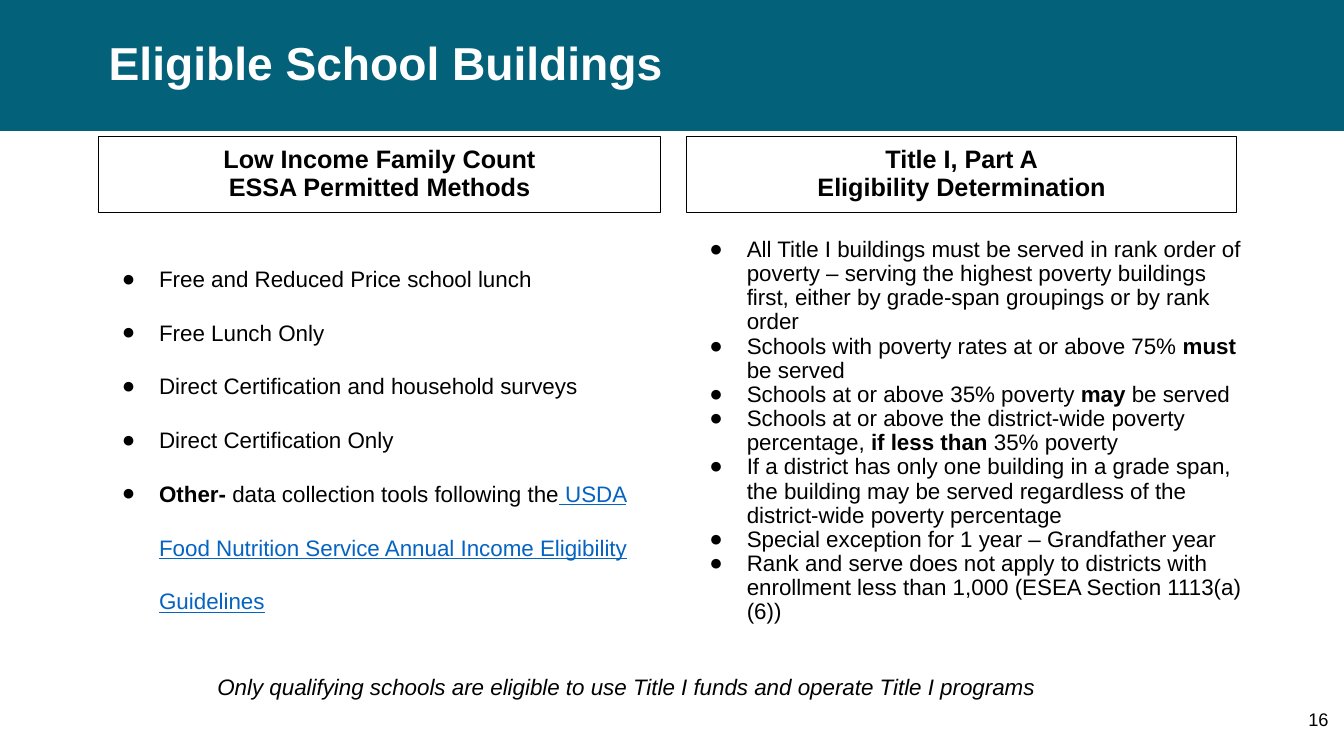
from lxml import etree
from pptx import Presentation
from pptx.dml.color import RGBColor
from pptx.enum.shapes import MSO_SHAPE
from pptx.enum.text import MSO_ANCHOR, MSO_AUTO_SIZE, PP_ALIGN
from pptx.oxml.ns import qn
from pptx.util import Cm, Pt

RECTANGLE = MSO_SHAPE.RECTANGLE
TOP, MIDDLE = MSO_ANCHOR.TOP, MSO_ANCHOR.MIDDLE
LEFT, CENTER, RIGHT = PP_ALIGN.LEFT, PP_ALIGN.CENTER, PP_ALIGN.RIGHT
NO_FIT = MSO_AUTO_SIZE.NONE

TEAL, WHITE, BLACK, LINK_BLUE = "03617A", "FFFFFF", "000000", "0563C1"

# Content: each bullet is a list of (text, style) spans
TITLE = "Eligible School Buildings"
METHODS = [
    [("Free and Reduced Price school lunch", "")],
    [("Free Lunch Only", "")],
    [("Direct Certification and household surveys", "")],
    [("Direct Certification Only", "")],
    [("Other-", "bold"), (" data collection tools following the", ""),
     (" USDA Food Nutrition Service Annual Income Eligibility Guidelines", "link")],
]
RULES = [
    [("All Title I buildings must be served in rank order of poverty – serving the "
      "highest poverty buildings first, either by grade-span groupings or by rank order", "")],
    [("Schools with poverty rates at or above 75% ", ""), ("must ", "bold"), ("be served", "")],
    [("Schools at or above 35% poverty ", ""), ("may ", "bold"), ("be served", "")],
    [("Schools at or above the district-wide poverty percentage, ", ""),
     ("if less than", "bold"), (" 35% poverty", "")],
    [("If a district has only one building in a grade span, the building may be served "
      "regardless of the district-wide poverty percentage", "")],
    [("Special exception for 1 year – Grandfather year", "")],
    [("Rank and serve does not apply to districts with enrollment less than 1,000 "
      "(ESEA Section 1113(a)(6))", "")],
]
NOTE = "Only qualifying schools are eligible to use Title I funds and operate Title I programs"
PAGE_NUMBER = "16"

# Geometry in centimetres
PAGE_WIDTH, PAGE_HEIGHT, BAND_HEIGHT = 33.87, 19.05, 3.3
MARGIN = 2.49
HEADING_TOP, HEADING_HEIGHT, LIST_TOP = 3.43, 1.93, 5.87

# Columns: heading, bullets, left, heading width, list width, list height, line spacing
COLUMNS = [
    ("Low Income Family Count\vESSA Permitted Methods", METHODS,
     MARGIN, 14.15, 14.33, 10.95, 2.0),
    ("Title I, Part A\vEligibility Determination", RULES,
     17.3, 13.87, 14.4, 12.45, 0.9),
]


def color(value):
    return RGBColor.from_string(value)


def place(shape, left, top, width, height):
    shape.left, shape.top = Cm(left), Cm(top)
    shape.width, shape.height = Cm(width), Cm(height)


def prepare_frame(shape, anchor, side=0.25, edge=0.13):
    frame = shape.text_frame
    frame.word_wrap = True
    frame.auto_size = NO_FIT
    frame.vertical_anchor = anchor
    frame.margin_left = frame.margin_right = Cm(side)
    frame.margin_top = frame.margin_bottom = Cm(edge)
    return frame


def style_span(span, size, ink=BLACK, bold=False, italic=False, underline=False):
    font = span.font
    font.name, font.size = "Arial", Pt(size)
    font.color.rgb = color(ink)
    font.bold, font.italic, font.underline = bold, italic, underline


def style_para(para, align, spacing):
    para.alignment = align
    para.line_spacing = spacing
    para.space_before = para.space_after = Pt(0)


def write(shape, text, size, align, anchor, spacing=0.9, edge=0.13, **style):
    frame = prepare_frame(shape, anchor, edge=edge)
    frame.text = text
    para = frame.paragraphs[0]
    style_para(para, align, spacing)
    for span in para.runs:
        style_span(span, size, **style)


def add_bullet(para):
    properties = para._p.get_or_add_pPr()
    properties.set("marL", str(Cm(1.27)))
    properties.set("indent", str(-Cm(0.94)))
    bullet_color = etree.SubElement(properties, qn("a:buClr"))
    etree.SubElement(bullet_color, qn("a:srgbClr"), val=BLACK)
    etree.SubElement(properties, qn("a:buFont"), typeface="Arial")
    etree.SubElement(properties, qn("a:buChar"), char="●")


def write_bullets(shape, bullets, spacing):
    frame = prepare_frame(shape, TOP)
    for index, spans in enumerate(bullets):
        para = frame.paragraphs[0] if index == 0 else frame.add_paragraph()
        add_bullet(para)
        style_para(para, LEFT, spacing)
        for text, style in spans:
            span = para.add_run()
            span.text = text
            is_link = style == "link"
            style_span(span, 16, LINK_BLUE if is_link else BLACK,
                       bold=style == "bold", underline=is_link)


def add_label(page, area, text, size, align, spacing, italic=False):
    box = page.shapes.add_textbox(*(Cm(length) for length in area))
    write(box, text, size, align, TOP, spacing, edge=0.25, italic=italic)
    return box


def main():
    deck = Presentation()
    deck.slide_width, deck.slide_height = Cm(PAGE_WIDTH), Cm(PAGE_HEIGHT)
    page = deck.slides.add_slide(deck.slide_layouts.get_by_name("Comparison"))

    # Title band, sent behind the title
    band = page.shapes.add_shape(RECTANGLE, 0, 0, Cm(PAGE_WIDTH), Cm(BAND_HEIGHT))
    band.shadow.inherit = False
    band.fill.solid()
    band.fill.fore_color.rgb = color(TEAL)
    band.line.fill.background()
    page.shapes._spTree.insert(2, band._element)

    title = page.shapes.title
    place(title, MARGIN, 0, 29.21, BAND_HEIGHT)
    write(title, TITLE, 33, LEFT, MIDDLE, ink=WHITE, bold=True)

    # Two columns: outlined heading above a bulleted list
    for column, (heading_text, bullets, left, heading_width,
                 list_width, list_height, spacing) in enumerate(COLUMNS):
        heading = page.placeholders[1 + 2 * column]
        place(heading, left, HEADING_TOP, heading_width, HEADING_HEIGHT)
        heading.line.color.rgb = color(BLACK)
        heading.line.width = Pt(0.75)
        write(heading, heading_text, 18, CENTER, MIDDLE, bold=True)

        body = page.placeholders[2 + 2 * column]
        place(body, left, LIST_TOP, list_width, list_height)
        write_bullets(body, bullets, spacing)

    # Closing note and page number
    note = add_label(page, (5.23, 16.79, 24.1, 1.42), NOTE, 16, LEFT, 0.9, italic=True)
    note.text_frame.paragraphs[0].space_before = Pt(0)
    add_label(page, (31.7, 17.6, 2.03, 1.45), PAGE_NUMBER, 13, RIGHT, 1.0)

    deck.save("out.pptx")


if __name__ == "__main__":
    main()
